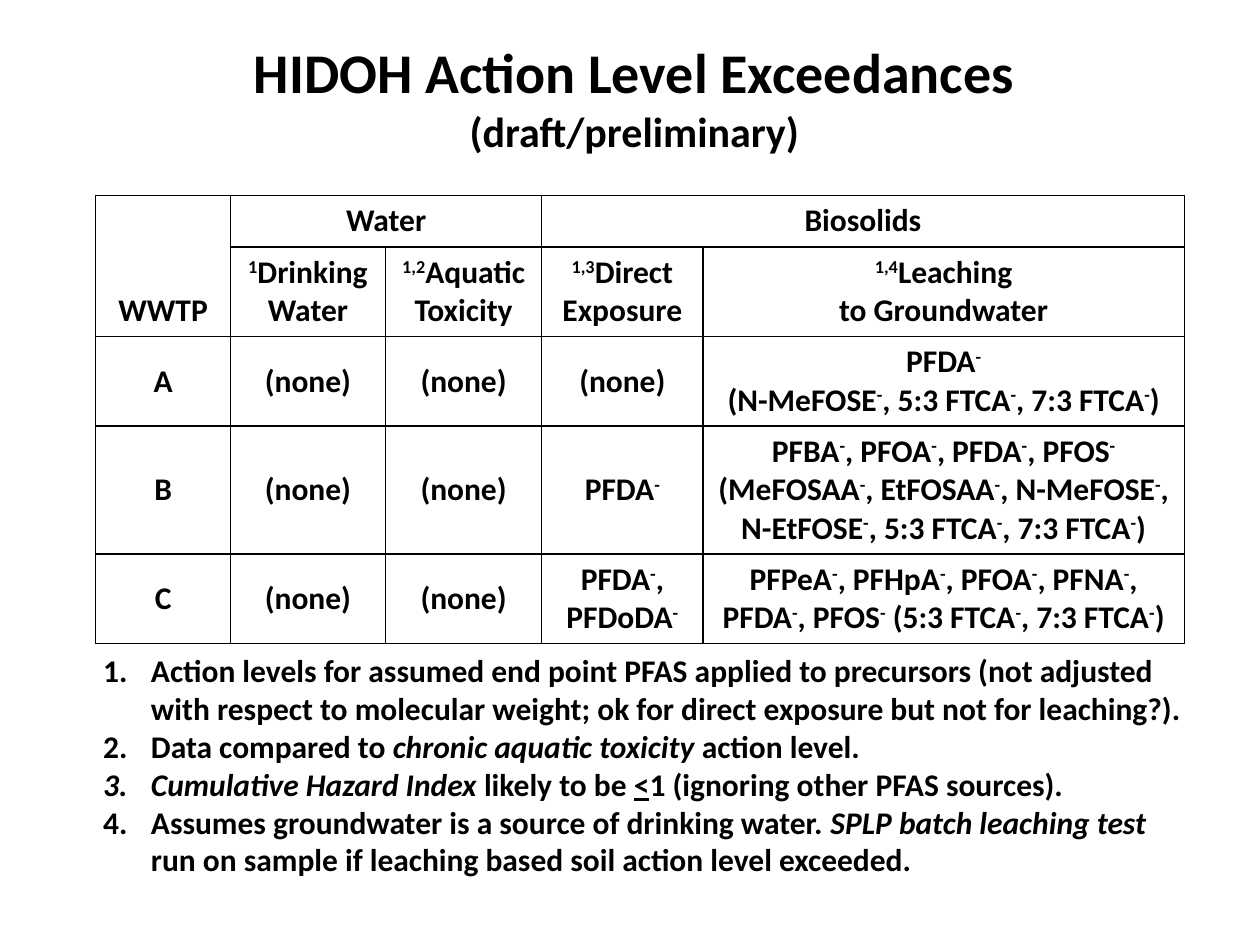
from lxml.etree import SubElement
from pptx import Presentation
from pptx.dml.color import RGBColor
from pptx.enum.text import MSO_ANCHOR, MSO_AUTO_SIZE, PP_ALIGN
from pptx.oxml import parse_xml
from pptx.oxml.ns import nsdecls, qn
from pptx.util import Inches, Pt

BLACK = RGBColor(0, 0, 0)
FONT = "Calibri"
COLUMN_WIDTHS = [1.07, 1.23, 1.24, 1.28, 3.82]
ROW_HEIGHTS = [0.41, 0.7, 0.7, 1.0, 0.7]

# Text between carets is superscript; a line break starts a new paragraph.
TABLE_ROWS = [
    ["WWTP", "Water", "", "Biosolids", ""],
    ["", "^1^Drinking\nWater", "^1,2^Aquatic Toxicity", "^1,3^Direct Exposure",
     "^1,4^Leaching\nto Groundwater"],
    ["A", "(none)", "(none)", "(none)",
     "PFDA^-^\n(N-MeFOSE^-^, 5:3 FTCA^-^, 7:3 FTCA^-^)"],
    ["B", "(none)", "(none)", "PFDA^-^",
     "PFBA^-^, PFOA^-^, PFDA^-^, PFOS^-^ (MeFOSAA^-^, EtFOSAA^-^, "
     "N-MeFOSE^-^, N-EtFOSE^-^, 5:3 FTCA^-^, 7:3 FTCA^-^)"],
    ["C", "(none)", "(none)", "PFDA^-^, PFDoDA^-^",
     "PFPeA^-^, PFHpA^-^, PFOA^-^, PFNA^-^, PFDA^-^, PFOS^-^ "
     "(5:3 FTCA^-^, 7:3 FTCA^-^)"],
]
ITALIC = {"italic": True}
UNDERLINE = {"underline": True}
NOTES = [
    [("Action levels for assumed end point PFAS applied to precursors (not adjusted "
      "with respect to molecular weight; ok for direct exposure but not for leaching?).", {})],
    [("Data compared to ", {}), ("chronic aquatic toxicity ", ITALIC), ("action level.", {})],
    [("Cumulative Hazard Index ", ITALIC), ("likely to be ", {}), ("<", UNDERLINE),
     ("1 (ignoring other PFAS sources).", {})],
    [("Assumes groundwater is a source of drinking water. ", {}),
     ("SPLP batch leaching test ", ITALIC),
     ("run on sample if leaching based soil action level exceeded.", {})],
]


def add_run(paragraph, text, size=18, italic=False, underline=False, superscript=False):
    run = paragraph.add_run()
    run.text = text
    font = run.font
    font.name, font.size, font.bold = FONT, Pt(size), True
    font.italic, font.underline = italic, underline
    font.color.rgb = BLACK
    if superscript:
        font._element.set("baseline", "30000")


def add_borders(cell):
    properties = cell._tc.get_or_add_tcPr()
    for position, side in enumerate(["lnL", "lnR", "lnT", "lnB"]):
        properties.insert(position, parse_xml(
            f'<a:{side} {nsdecls("a")} w="{Pt(1)}"><a:solidFill>'
            f'<a:srgbClr val="{BLACK}"/></a:solidFill></a:{side}>'))


presentation = Presentation()
presentation.slide_width, presentation.slide_height = Inches(10), Inches(7.5)
slide = presentation.slides.add_slide(presentation.slide_layouts[5])

# Title
title = slide.shapes.title
title.left, title.top = Inches(0.58), Inches(0.25)
title.width, title.height = Inches(8.91), Inches(1.04)
title_frame = title.text_frame
title_frame.auto_size = MSO_AUTO_SIZE.NONE
title_frame.vertical_anchor = MSO_ANCHOR.TOP
title_lines = [("HIDOH Action Level Exceedances", 32), ("(draft/preliminary)", 24)]
for index, (line, size) in enumerate(title_lines):
    paragraph = title_frame.add_paragraph() if index else title_frame.paragraphs[0]
    paragraph.alignment = PP_ALIGN.CENTER
    add_run(paragraph, line, size=size)

# Table of exceedances
table = slide.shapes.add_table(
    len(ROW_HEIGHTS), len(COLUMN_WIDTHS), Inches(0.76), Inches(1.55),
    Inches(sum(COLUMN_WIDTHS)), Inches(sum(ROW_HEIGHTS))).table
table.first_row = table.horz_banding = False
for column, width in zip(table.columns, COLUMN_WIDTHS):
    column.width = Inches(width)
for row, height in zip(table.rows, ROW_HEIGHTS):
    row.height = Inches(height)
table.cell(0, 0).merge(table.cell(1, 0))
table.cell(0, 1).merge(table.cell(0, 2))
table.cell(0, 3).merge(table.cell(0, 4))

for row_index, row_texts in enumerate(TABLE_ROWS):
    for column_index, text in enumerate(row_texts):
        cell = table.cell(row_index, column_index)
        cell.fill.background()
        add_borders(cell)
        if cell.is_spanned:
            continue
        if row_index > 1:
            cell.vertical_anchor = MSO_ANCHOR.MIDDLE
        elif row_index == 1 or column_index == 0:
            cell.vertical_anchor = MSO_ANCHOR.BOTTOM
        for index, line in enumerate(text.split("\n")):
            frame = cell.text_frame
            paragraph = frame.add_paragraph() if index else frame.paragraphs[0]
            paragraph.alignment = PP_ALIGN.CENTER
            for part_index, part in enumerate(line.split("^")):
                if part:
                    add_run(paragraph, part, superscript=part_index % 2 == 1)

# Numbered notes
notes_frame = slide.shapes.add_textbox(
    Inches(0.72), Inches(5.12), Inches(8.77), Inches(1.92)).text_frame
notes_frame.word_wrap = True
for index, note in enumerate(NOTES):
    paragraph = notes_frame.add_paragraph() if index else notes_frame.paragraphs[0]
    properties = paragraph._p.get_or_add_pPr()
    properties.set("marL", str(Inches(0.38)))
    properties.set("indent", str(-Inches(0.38)))
    SubElement(properties, qn("a:buFont"), typeface="+mj-lt")
    SubElement(properties, qn("a:buAutoNum"), type="arabicPeriod")
    for text, style in note:
        add_run(paragraph, text, **style)

presentation.save("out.pptx")
